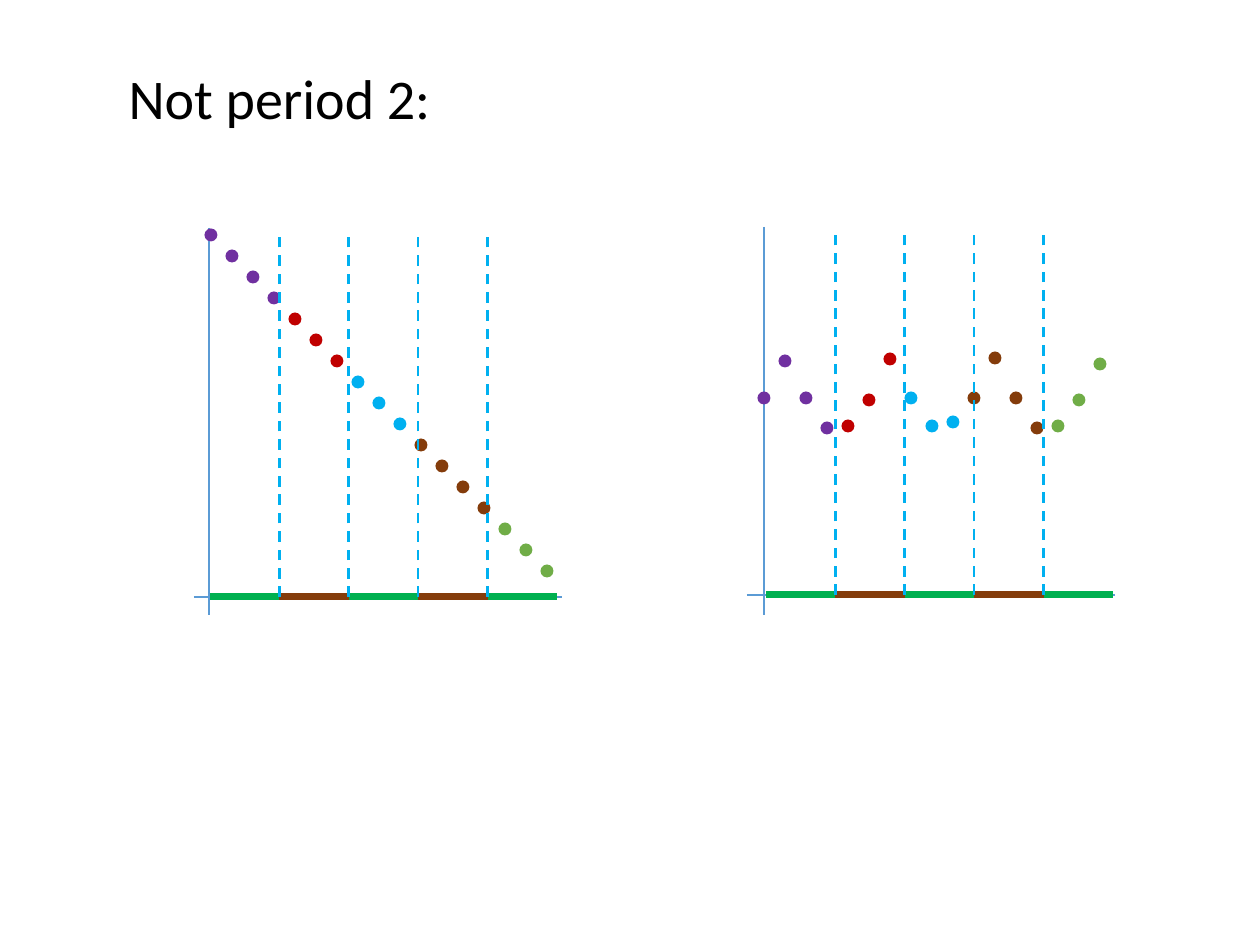
"""Build a slide with two sampled sequences that do not have period 2."""
from dataclasses import dataclass

from pptx import Presentation, util as u
from pptx.dml.color import RGBColor
from pptx.enum import dml, shapes, text
from pptx.oxml.ns import qn

TITLE = "Not period 2:"
GROUPS = [("purple", 4), ("red", 3), ("blue", 3), ("brown", 4), ("lime", 3)]
BANDS = ["green", "brown", "green", "brown", "green"]
PLOTS = [
    {"axis_x": 209, "axis_y": 597, "top": 228, "left": 194, "dash_top": 234,
     "band_x": 210, "first_x": 211,
     "heights": [235 + 21 * i for i in range(17)]},
    {"axis_x": 764, "axis_y": 595, "top": 227, "left": 747, "dash_top": 233,
     "band_x": 766, "first_x": 764,
     "heights": [398, 361, 398, 428, 426, 400, 359, 398, 426,
                 422, 398, 358, 398, 428, 426, 400, 364]},
]
AXIS_BOTTOM, AXIS_WIDTH, BAND_WIDTH = 615, 368, 347
DOT_STEP, DOT_SIZE = 21, 13


@dataclass(frozen=True)
class Theme:
    font: str = "Calibri"
    title_size: int = 32
    ink: str = "000000"
    axis: str = "5B9BD5"
    purple: str = "7030A0"
    red: str = "C00000"
    blue: str = "00B0F0"
    brown: str = "843C0B"
    lime: str = "70AD47"
    green: str = "00B050"


THEME = Theme()


def px(value):
    return u.Emu(round(value * 914400 / 126))


def rgb(name):
    return RGBColor.from_string(getattr(THEME, name))


def add_line(slide, start, end, color, width, dashed=False):
    line = slide.shapes.add_connector(
        shapes.MSO_CONNECTOR.STRAIGHT, *map(px, (*start, *end)))
    line.line.color.rgb = rgb(color)
    line.line.width = u.Pt(width)
    if dashed:
        line.line.dash_style = dml.MSO_LINE.DASH
    properties = line._element.spPr
    properties.append(properties.makeelement(qn("a:effectLst"), {}))


def add_dot(slide, x, y, color):
    corner = (x - DOT_SIZE / 2, y - DOT_SIZE / 2)
    dot = slide.shapes.add_shape(
        shapes.MSO_SHAPE.OVAL, *map(px, (*corner, DOT_SIZE, DOT_SIZE)))
    dot.shadow.inherit = False
    dot.fill.solid()
    dot.fill.fore_color.rgb = rgb(color)
    dot.line.fill.background()


def add_plot(slide, plot):
    base, axis_x, left = plot["axis_y"], plot["axis_x"], plot["left"]
    add_line(slide, (axis_x, plot["top"]), (axis_x, AXIS_BOTTOM), "axis", 1)
    add_line(slide, (left, base), (left + AXIS_WIDTH, base), "axis", 1)

    dot_colors = [color for color, count in GROUPS for _ in range(count)]
    for i, (y, color) in enumerate(zip(plot["heights"], dot_colors)):
        add_dot(slide, plot["first_x"] + i * DOT_STEP, y, color)

    step = BAND_WIDTH / len(BANDS)
    edges = [plot["band_x"] + i * step for i in range(len(BANDS) + 1)]
    for start, end, color in zip(edges, edges[1:], BANDS):
        add_line(slide, (start, base), (end, base), color, 4)
    for x in edges[1:-1]:
        add_line(slide, (x, base), (x, plot["dash_top"]), "blue", 1.5, True)


def add_title(slide):
    title = slide.shapes.title
    title.left, title.top, title.width, title.height = map(
        px, (116, 57, 1060, 81))
    frame = title.text_frame
    frame.text = TITLE
    frame.word_wrap = True
    frame.auto_size = text.MSO_AUTO_SIZE.SHAPE_TO_FIT_TEXT
    frame.vertical_anchor = text.MSO_ANCHOR.TOP
    heading = frame.paragraphs[0]
    heading.alignment = text.PP_ALIGN.LEFT
    font = heading.runs[0].font
    font.name, font.size = THEME.font, u.Pt(THEME.title_size)
    font.color.rgb = rgb("ink")


def main():
    deck = Presentation()
    deck.slide_width, deck.slide_height = px(1260), px(945)
    slide = deck.slides.add_slide(deck.slide_layouts[5])
    add_title(slide)
    for plot in PLOTS:
        add_plot(slide, plot)
    deck.save("out.pptx")


if __name__ == "__main__":
    main()
